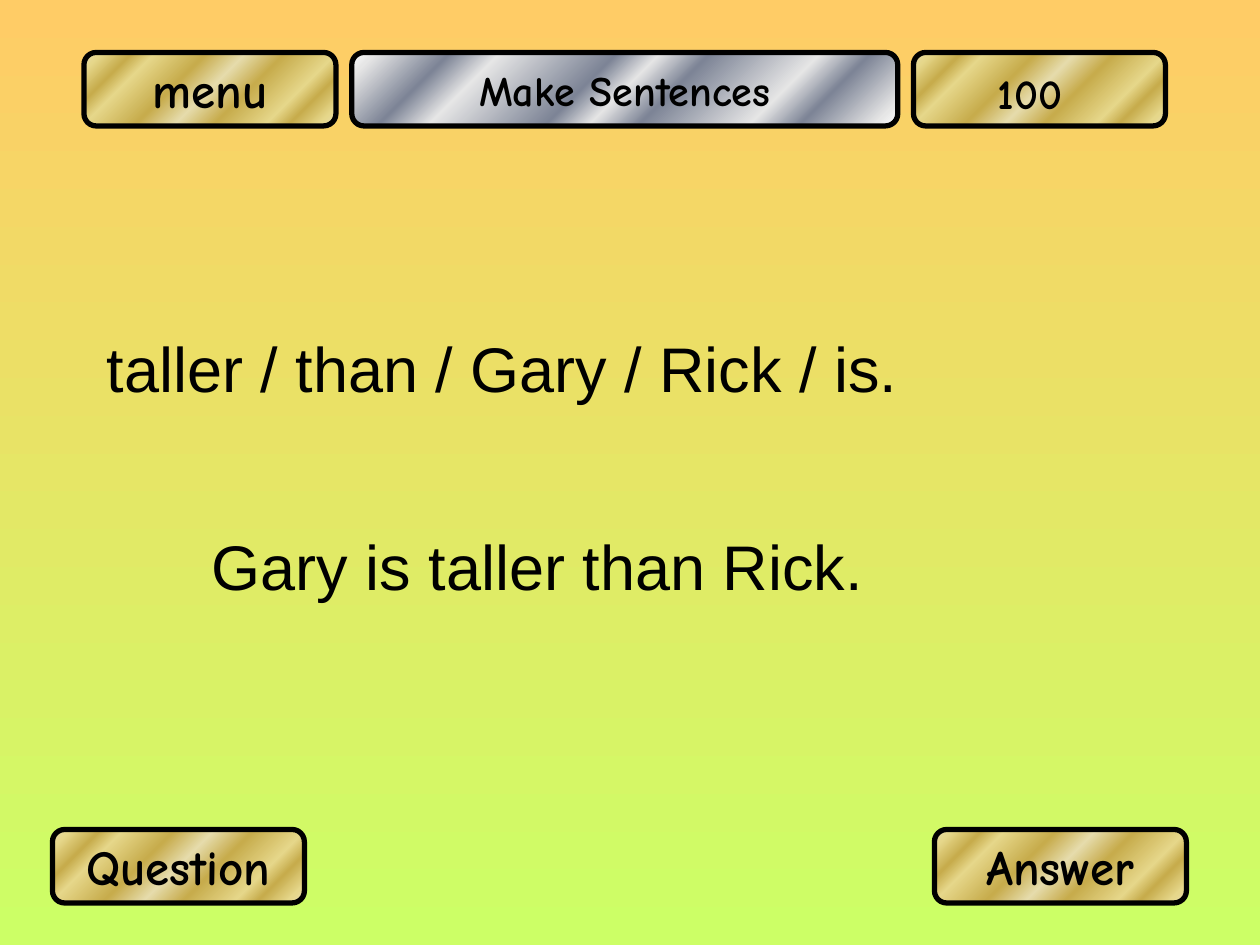
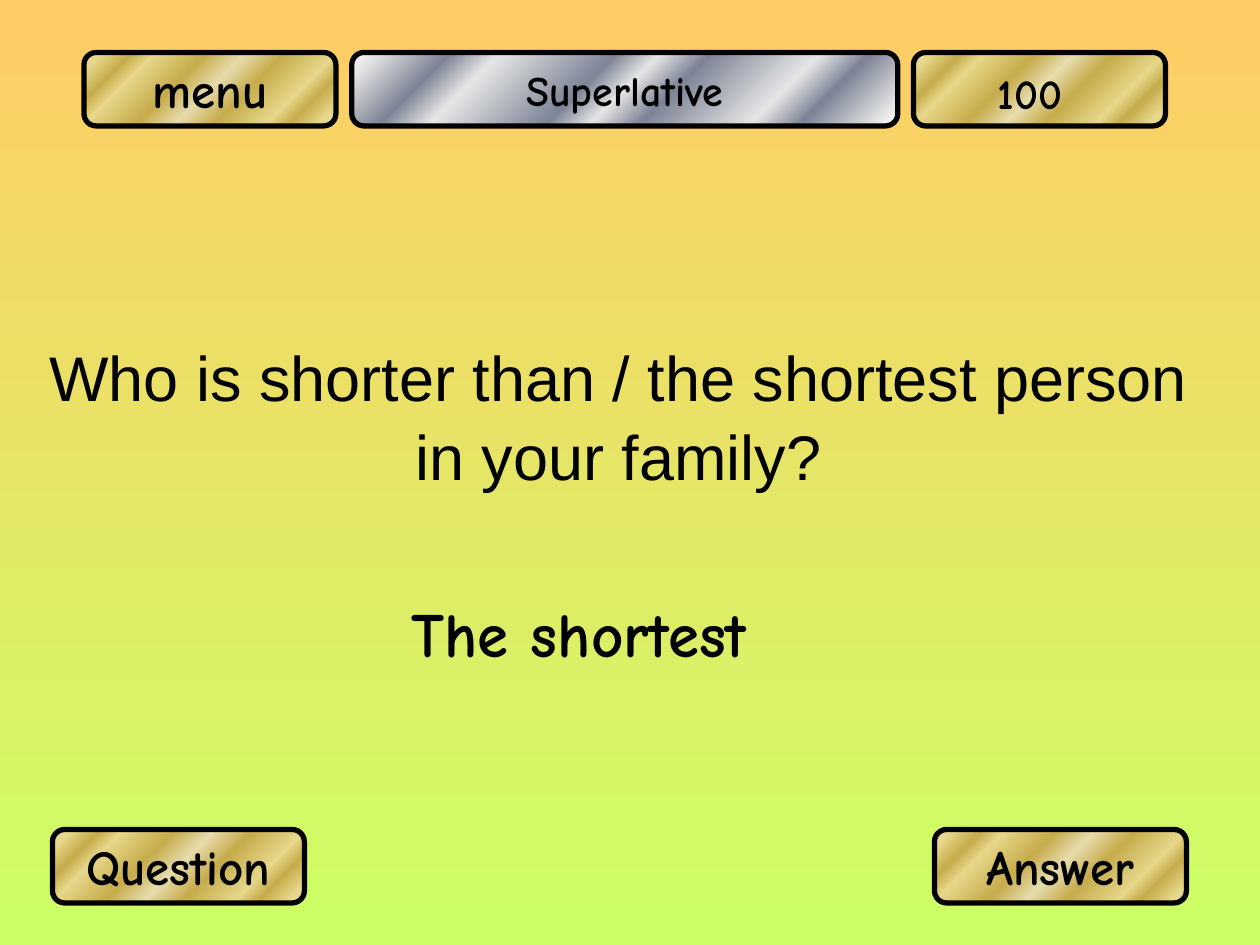
from lxml import etree
from pptx import Presentation
from pptx.dml.color import RGBColor
from pptx.enum.shapes import MSO_SHAPE
from pptx.enum.text import MSO_ANCHOR, PP_ALIGN
from pptx.oxml.ns import qn
from pptx.util import Pt

ROUNDED = MSO_SHAPE.ROUNDED_RECTANGLE
MIDDLE, TOP = MSO_ANCHOR.MIDDLE, MSO_ANCHOR.TOP
LEFT, CENTER = PP_ALIGN.LEFT, PP_ALIGN.CENTER

# Shared look
BLACK = "000000"
BODY, COMIC = "Arial", "Comic Neue"
SKY = [(0, "FFCC66"), (100, "CCFF66")]
PALE, LIGHT, DARK = "E6DCAC", "E6D78A", "C7AC4C"
GOLD = [(0, PALE), (6, LIGHT), (15, DARK), (22, LIGHT), (38, DARK), (50, PALE),
        (62, DARK), (78, LIGHT), (85, DARK), (94, LIGHT), (100, PALE)]
WHITE, GREY, STEEL = "FFFFFF", "E6E6E6", "7D8496"
SILVER = [(0, WHITE), (4, GREY), (16, STEEL), (24, GREY), (43, STEEL), (50, GREY),
          (58, STEEL), (76, GREY), (84, STEEL), (96, GREY), (100, WHITE)]

# Button geometry
BTN_W, BTN_H = 144, 42
HEADER = (48, 30, 618, BTN_H)
FOOTER = (30, 474, 648, BTN_H)
GAP = 9


def color(hex_string):
    return RGBColor.from_string(hex_string)


def set_gradient(fill, element, stops, angle):
    """Fill with colour stops; the angle runs clockwise."""
    fill.gradient()
    fill.gradient_angle = 360 - angle
    gs_list = next(element.iter(qn("a:gsLst")))
    for gs in list(gs_list):
        gs_list.remove(gs)
    for pos, hex_string in stops:
        gs = etree.SubElement(gs_list, qn("a:gs"), pos=str(pos * 1000))
        etree.SubElement(gs, qn("a:srgbClr"), val=hex_string)


def write(sp, text, size=36, font=BODY, bold=False, align=LEFT, anchor=TOP, before=0):
    """Write one paragraph per line of text, with space before the later ones."""
    tf = sp.text_frame
    tf.word_wrap = True
    tf.vertical_anchor = anchor
    for i, line in enumerate(text.split("\n")):
        p = tf.add_paragraph() if i else tf.paragraphs[0]
        p.alignment = align
        p.space_before = Pt(before if i else 0)
        r = p.add_run()
        r.text = line
        r.font.size, r.font.name, r.font.bold = Pt(size), font, bold
        r.font.color.rgb = color(BLACK)


def add_text(s, box, text, **fmt):
    write(s.shapes.add_textbox(*map(Pt, box)), text, **fmt)


def add_button(s, box, stops, text="", size=28):
    sp = s.shapes.add_shape(ROUNDED, *map(Pt, box))
    sp.shadow.inherit = False
    sp.adjustments[0] = 0.167
    set_gradient(sp.fill, sp.element, stops, 45)
    sp.line.color.rgb = color(BLACK)
    sp.line.width = Pt(3)
    if text:
        write(sp, text, size=size, font=COMIC, bold=True, align=CENTER, anchor=MIDDLE)


def add_header(s, box, category, points):
    x, y, w, h = box
    right = x + w - BTN_W
    title_x = x + BTN_W + GAP
    add_button(s, (x, y, BTN_W, h), GOLD, "menu")
    add_button(s, (right, y, BTN_W, h), GOLD)
    add_button(s, (title_x, y, right - GAP - title_x, h), SILVER, category, size=24)
    # Points sit left of centre on their button
    add_text(s, (right + 41, y + 5.25, 61, 36), points, size=24, font=COMIC, bold=True)


def add_footer(s, box):
    x, y, w, h = box
    add_button(s, (x, y, BTN_W, h), GOLD, "Question")
    add_button(s, (x + w - BTN_W, y, BTN_W, h), GOLD, "Answer")


def add_quiz_slide(prs, category, points, question, answer):
    """Question and answer are (box, text, format)."""
    s = prs.slides.add_slide(prs.slide_layouts[6])
    add_header(s, HEADER, category, points)
    for box, text, fmt in (question, answer):
        add_text(s, box, text, **fmt)
    add_footer(s, FOOTER)


def main():
    prs = Presentation()
    prs.slide_width, prs.slide_height = Pt(720), Pt(540)
    background = prs.slide_master.background
    set_gradient(background.fill, prs.slide_master.element, SKY, 90)

    add_quiz_slide(
        prs, "Make Sentences", "100",
        ((54, 184.5, 606, 92), "taller / than / Gary / Rick / is.", {}),
        ((114, 298, 400, 48), "Gary is taller than Rick.", {}))
    add_quiz_slide(
        prs, "Superlative", "100",
        ((18, 190, 681, 135),
         "Who is shorter than / the shortest person \nin your family? ",
         {"align": CENTER, "before": 2}),
        ((228, 336, 244, 51), "The shortest", {"font": COMIC, "bold": True}))
    prs.save("out.pptx")


if __name__ == "__main__":
    main()
